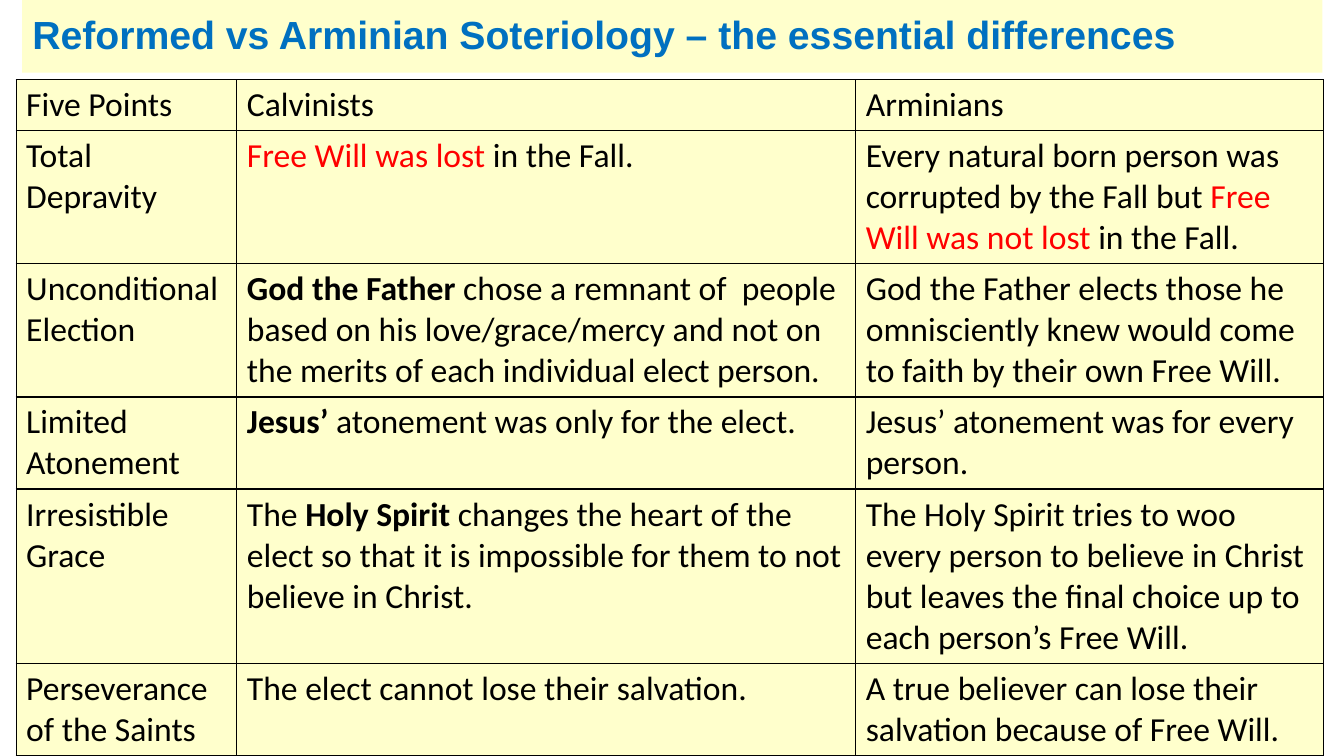
from dataclasses import dataclass

from lxml import etree
from pptx import Presentation, util as u
from pptx.dml.color import RGBColor
from pptx.enum import text
from pptx.oxml.ns import qn


@dataclass(frozen=True)
class Theme:
    paper: str = "FFFFCC"
    heading: str = "0070C0"
    ink: str = "000000"
    accent: str = "FF0000"
    title_font: str = "Arial"
    body_font: str = "Calibri"
    title_size: int = 28
    body_size: int = 24
    border_width: int = 1


class SlideBuilder:
    """Places elements on a grid of 80 columns by 45 rows."""

    COLUMNS, ROWS = 80, 45

    def __init__(self, presentation, theme):
        self.theme = theme
        self.slide = presentation.slides.add_slide(presentation.slide_layouts[5])
        self.column = presentation.slide_width / self.COLUMNS
        self.row = presentation.slide_height / self.ROWS

    def x(self, columns):
        return u.Emu(round(columns * self.column))

    def y(self, rows):
        return u.Emu(round(rows * self.row))

    def fill(self, target):
        target.fill.solid()
        target.fill.fore_color.rgb = RGBColor.from_string(self.theme.paper)

    def style(self, font, name, size, color, bold=False):
        font.name, font.size, font.bold = name, u.Pt(size), bold
        font.color.rgb = RGBColor.from_string(color)

    def title(self, wording, left, top, width, height):
        shape = self.slide.shapes.title
        shape.left, shape.top = self.x(left), self.y(top)
        shape.width, shape.height = self.x(width), self.y(height)
        self.fill(shape)
        frame = shape.text_frame
        frame.text = wording
        frame.word_wrap = True
        frame.auto_size = text.MSO_AUTO_SIZE.NONE
        frame.vertical_anchor = text.MSO_ANCHOR.MIDDLE
        paragraph = frame.paragraphs[0]
        paragraph.alignment = text.PP_ALIGN.LEFT
        paragraph.line_spacing = 0.9
        self.style(paragraph.font, self.theme.title_font, self.theme.title_size,
                   self.theme.heading, bold=True)

    def table(self, content, left, top, widths, heights):
        table = self.slide.shapes.add_table(
            len(heights), len(widths), self.x(left), self.y(top),
            self.x(sum(widths)), self.y(sum(heights))).table
        table.first_row = table.horz_banding = False
        for column, width in zip(table.columns, widths):
            column.width = self.x(width)
        for row, height, entries in zip(table.rows, heights, content):
            row.height = self.y(height)
            for cell, entry in zip(row.cells, entries):
                self.cell(cell, entry)

    def cell(self, cell, entry):
        paragraph = cell.text_frame.paragraphs[0]
        self.style(paragraph.font, self.theme.body_font, self.theme.body_size,
                   self.theme.ink)
        for part in [entry] if isinstance(entry, str) else entry:
            wording, emphasis = (part, None) if isinstance(part, str) else part
            run = paragraph.add_run()
            run.text = wording
            if emphasis == "bold":
                run.font.bold = True
            elif emphasis == "accent":
                run.font.color.rgb = RGBColor.from_string(self.theme.accent)
        self.borders(cell)
        self.fill(cell)

    def borders(self, cell):
        properties = cell._tc.get_or_add_tcPr()
        for side in ("a:lnL", "a:lnR", "a:lnT", "a:lnB"):
            line = etree.SubElement(properties, qn(side),
                                    w=str(u.Pt(self.theme.border_width)))
            solid = etree.SubElement(line, qn("a:solidFill"))
            etree.SubElement(solid, qn("a:srgbClr"), val=self.theme.ink)


# Each cell is plain text, or a list of parts with (text, emphasis) pairs
FIVE_POINTS = [
    ["Five Points", "Calvinists", "Arminians"],
    ["Total Depravity",
     [("Free Will was lost ", "accent"), "in the Fall."],
     ["Every natural born person was corrupted by the Fall but ",
      ("Free Will was not lost", "accent"), " in the Fall."]],
    ["Unconditional Election",
     [("God the Father ", "bold"),
      "chose a remnant of  people based on his love/grace/mercy and not on  "
      "the merits of each individual elect person."],
     "God the Father elects those he omnisciently knew would come to faith "
     "by their own Free Will."],
    ["Limited Atonement",
     [("Jesus’", "bold"), " atonement was only for the elect."],
     "Jesus’ atonement was for every person."],
    ["Irresistible Grace",
     ["The ", ("Holy Spirit ", "bold"),
      "changes the heart of the elect so that it is impossible for them to "
      "not believe in Christ."],
     "The Holy Spirit tries to woo every person to believe in Christ but "
     "leaves the final choice up to each person’s Free Will."],
    ["Perseverance of the Saints",
     "The elect cannot lose their salvation.",
     "A true believer can lose their salvation because of Free Will."],
]
LINES_PER_ROW = [1, 3, 3, 2, 4, 2]
LINE_HEIGHT, CELL_PADDING = 2.4, 0.6


def main():
    presentation = Presentation()
    presentation.slide_width = u.Inches(13.33)
    presentation.slide_height = u.Inches(7.5)
    builder = SlideBuilder(presentation, Theme())

    # Title band
    builder.title("Reformed vs Arminian Soteriology – the essential differences",
                  left=1.32, top=0, width=77.4, height=4.32)

    # Comparison table, each row as tall as its longest cell
    builder.table(FIVE_POINTS, left=0.96, top=4.74, widths=[13.14, 36.84, 27.84],
                  heights=[lines * LINE_HEIGHT + CELL_PADDING
                           for lines in LINES_PER_ROW])

    presentation.save("out.pptx")


if __name__ == "__main__":
    main()
